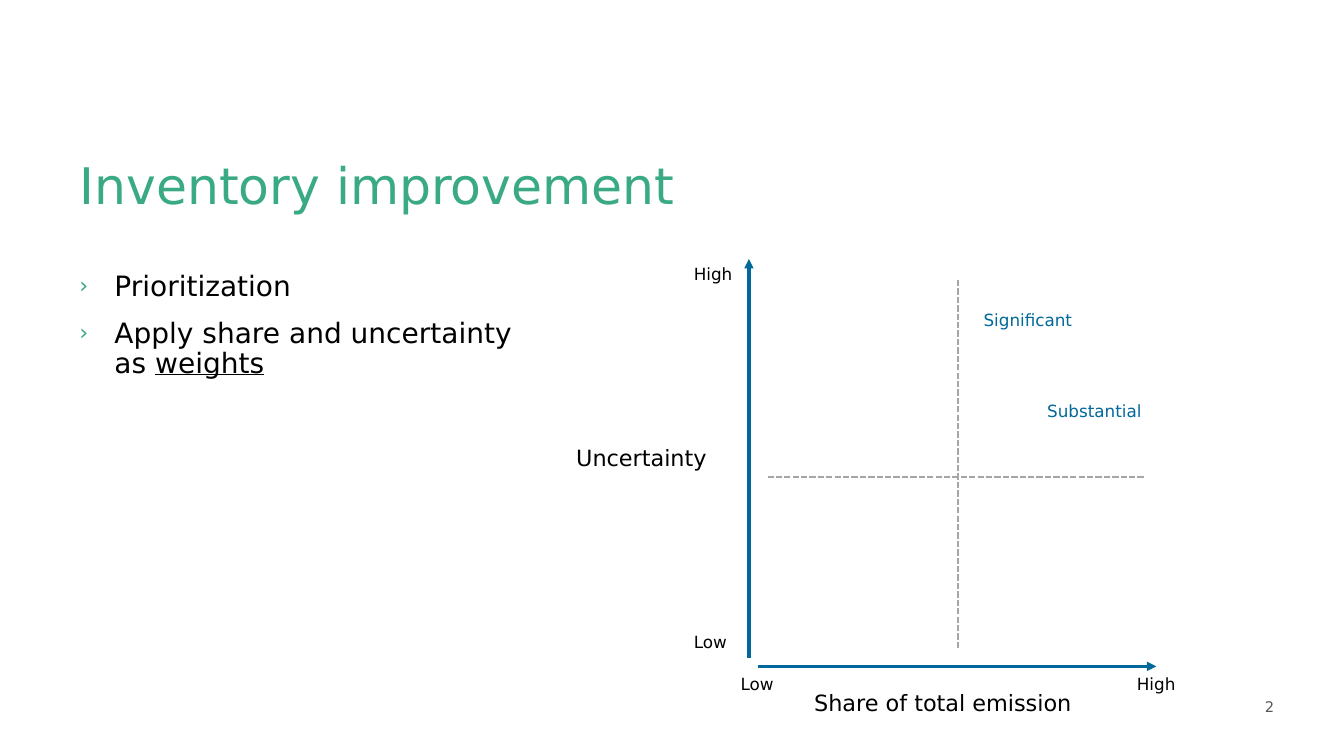
from dataclasses import dataclass

import pptx
import pptx.dml.color
import pptx.enum.dml
import pptx.enum.shapes
import pptx.enum.text
import pptx.oxml.ns
import pptx.util
from lxml import etree

Pt = pptx.util.Pt
Align = pptx.enum.text.PP_ALIGN
Anchor = pptx.enum.text.MSO_ANCHOR
qn = pptx.oxml.ns.qn


@dataclass(frozen=True)
class Theme:
    font: str = "DejaVu Sans"
    green: str = "3AAA84"
    blue: str = "00689A"
    black: str = "000000"
    page_grey: str = "595959"
    guide_grey: str = "A6A6A6"
    title: float = 36
    body: float = 20
    axis: float = 16
    label: float = 12
    page: float = 10.5


THEME = Theme()


def rgb(color):
    return pptx.dml.color.RGBColor.from_string(color)


def style(run, size, color):
    run.font.name = THEME.font
    run.font.size = Pt(size)
    run.font.color.rgb = rgb(color)


def place(shape, box):
    shape.left, shape.top, shape.width, shape.height = [Pt(v) for v in box]


def add_title(s, text, box):
    title = s.shapes.title
    place(title, box)
    tf = title.text_frame
    tf.text = text
    tf.auto_size = pptx.enum.text.MSO_AUTO_SIZE.NONE
    tf.vertical_anchor = Anchor.BOTTOM
    p = tf.paragraphs[0]
    p.alignment = Align.LEFT
    p.line_spacing = 0.9
    style(p.runs[0], THEME.title, THEME.green)


def add_label(shapes, text, box, size, color=THEME.black, align=Align.LEFT):
    tf = shapes.add_textbox(*[Pt(v) for v in box]).text_frame
    tf.word_wrap = True
    tf.text = text
    p = tf.paragraphs[0]
    p.alignment = align
    style(p.runs[0], size, color)
    return tf


def add_line(shapes, start, end, color, width):
    line = shapes.add_connector(
        pptx.enum.shapes.MSO_CONNECTOR.STRAIGHT, *[Pt(v) for v in (*start, *end)]
    )
    line.line.color.rgb = rgb(color)
    line.line.width = Pt(width)
    etree.SubElement(line.element.spPr, qn("a:effectLst"))
    return line


def add_axis(shapes, start, end):
    axis = add_line(shapes, start, end, THEME.blue, 2.25)
    ln = axis.element.spPr.find(qn("a:ln"))
    etree.SubElement(ln, qn("a:tailEnd"), type="triangle")


def add_guide(shapes, start, end):
    guide = add_line(shapes, start, end, THEME.guide_grey, 1.5)
    guide.line.dash_style = pptx.enum.dml.MSO_LINE.SQUARE_DOT
    dash = guide.element.spPr.find(qn("a:ln")).find(qn("a:prstDash"))
    dash.set("val", "sysDash")


def add_bullet(p):
    pPr = p._p.get_or_add_pPr()
    pPr.set("marL", str(Pt(25)))
    pPr.set("indent", str(Pt(-25)))
    color = etree.SubElement(pPr, qn("a:buClr"))
    etree.SubElement(color, qn("a:srgbClr"), val=THEME.green)
    etree.SubElement(pPr, qn("a:buSzPct"), val="80000")
    etree.SubElement(pPr, qn("a:buFont"), typeface=THEME.font)
    etree.SubElement(pPr, qn("a:buChar"), char="›")


def add_bullets(s, items, box):
    tf = s.shapes.add_textbox(*[Pt(v) for v in box]).text_frame
    tf.word_wrap = True
    columns = tf._txBody.bodyPr
    columns.set("numCol", "2")
    columns.set("spcCol", str(Pt(36.7)))
    for i, (plain, underlined) in enumerate(items):
        p = tf.add_paragraph() if i else tf.paragraphs[0]
        p.text = plain
        add_bullet(p)
        p.line_spacing = 0.9
        p.space_before = Pt(12 if i else 0)
        if underlined:
            r = p.add_run()
            r.text = underlined
            r.font.underline = True
        for r in p.runs:
            style(r, THEME.body, THEME.black)


def add_share_axis(s):
    shapes = s.shapes.add_group_shape().shapes
    add_axis(shapes, (541.5, 476), (826, 476))
    add_label(shapes, "Share of total emission", (574.5, 489, 234.5, 26.6), THEME.axis)
    add_label(shapes, "Low", (522, 477.5, 52.5, 21.8), THEME.label)
    add_label(shapes, "High", (805, 477.5, 43.2, 21.8), THEME.label)


def add_uncertainty_axis(s):
    shapes = s.shapes.add_group_shape().shapes
    add_axis(shapes, (535, 470), (535, 185))
    add_label(shapes, "Uncertainty", (404.5, 314, 110.5, 26.6), THEME.axis)
    add_label(shapes, "Low", (488.5, 448, 43.2, 21.8), THEME.label)
    add_label(shapes, "High", (488.5, 185, 43.2, 21.8), THEME.label)


def add_quadrants(s):
    shapes = s.shapes.add_group_shape().shapes
    add_guide(shapes, (684, 200), (684, 463))
    add_guide(shapes, (817, 340.5), (548.5, 340.5))
    add_label(shapes, "Substantial", (740, 283, 83.5, 21.8), THEME.label, THEME.blue, Align.CENTER)
    add_label(shapes, "Significant", (695.5, 218, 88.5, 21.8), THEME.label, THEME.blue)


def add_page_number(s, text, box):
    tf = add_label(s.shapes, text, box, THEME.page, THEME.page_grey, Align.RIGHT)
    tf.vertical_anchor = Anchor.BOTTOM
    tf.margin_right = 0
    tf.paragraphs[0].space_after = Pt(6)


def main():
    prs = pptx.Presentation()
    prs.slide_width, prs.slide_height = Pt(960), Pt(540)
    s = prs.slides.add_slide(prs.slide_layouts[5])
    add_title(s, "Inventory improvement", (49.7, 82.8, 860.4, 74.9))
    add_page_number(s, "2", (516.2, 489.6, 393.9, 25.2))
    add_share_axis(s)
    add_uncertainty_axis(s)
    add_quadrants(s)
    add_bullets(
        s,
        [("Prioritization", ""), ("Apply share and uncertainty as ", "weights")],
        (49.7, 190.8, 709.9, 309.6),
    )
    prs.save("out.pptx")


if __name__ == "__main__":
    main()
